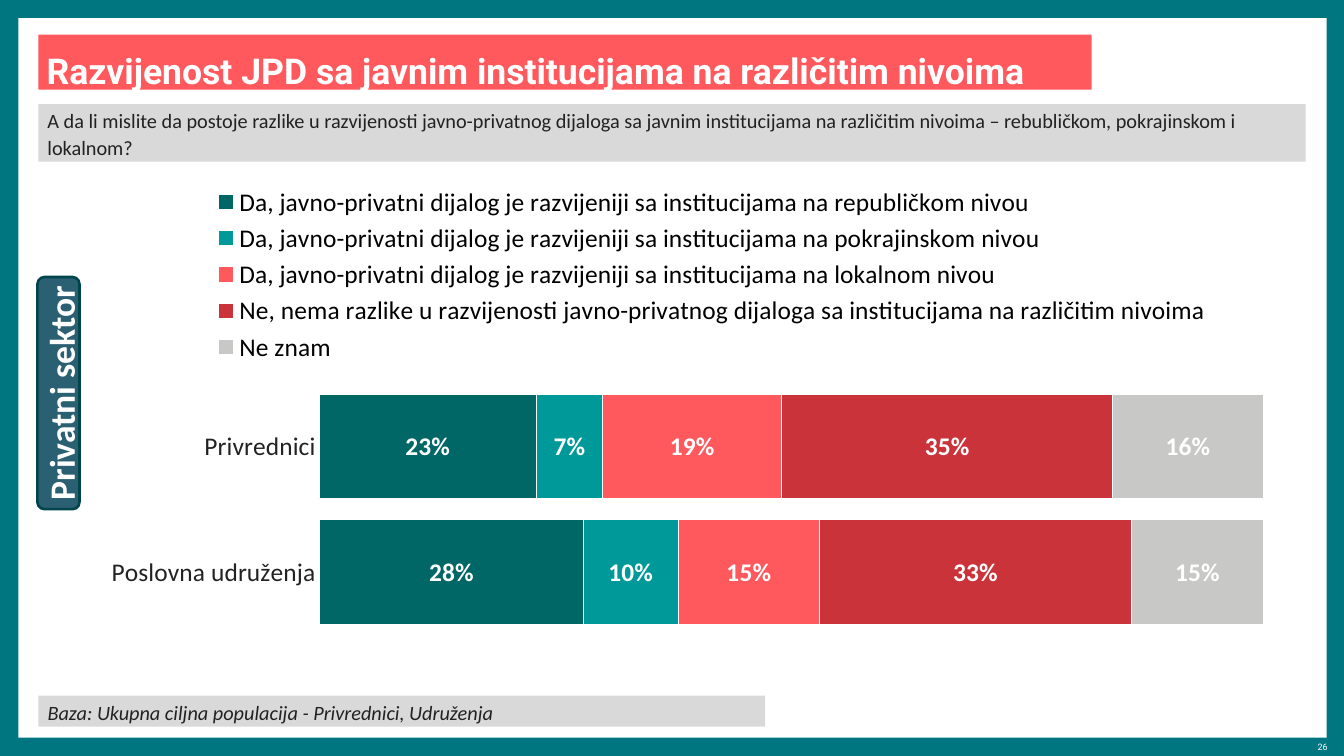
"""Build the slide on how developed the public-private dialogue is at each level."""
from lxml import etree
from pptx import Presentation
from pptx.chart.data import CategoryChartData
from pptx.dml.color import RGBColor
from pptx.enum.chart import XL_CHART_TYPE, XL_LEGEND_POSITION, XL_TICK_MARK
from pptx.enum.shapes import MSO_SHAPE
from pptx.enum.text import MSO_ANCHOR, MSO_AUTO_SIZE, PP_ALIGN
from pptx.oxml import parse_xml
from pptx.oxml.ns import nsdecls, qn
from pptx.util import Inches, Pt

RECTANGLE, ROUNDED = MSO_SHAPE.RECTANGLE, MSO_SHAPE.ROUNDED_RECTANGLE
LEFT, CENTER, RIGHT = PP_ALIGN.LEFT, PP_ALIGN.CENTER, PP_ALIGN.RIGHT
MIDDLE, NO_AUTOSIZE = MSO_ANCHOR.MIDDLE, MSO_AUTO_SIZE.NONE
NO_TICKS = XL_TICK_MARK.NONE

COLORS = {
    "frame": "007681", "white": "FFFFFF", "coral": "FF585D", "panel": "D9D9D9",
    "ink": "222223", "black": "000000", "badge": "2B5F72", "badge_line": "00454C",
    "republic": "006666", "province": "009999", "none": "CB333B", "unknown": "C8C9C7",
}


def style_font(font, color, **formats):
    """Apply font attributes and a named colour."""
    for name, value in formats.items():
        setattr(font, name, value)
    font.color.rgb = RGBColor.from_string(COLORS[color])


def fill_text(shape, box, text, insets, paragraph_formats, color, **font_formats):
    """Place a shape and write its single formatted paragraph."""
    shape.left, shape.top, shape.width, shape.height = map(Inches, box)
    frame = shape.text_frame
    frame.text = text
    sides = ("margin_left", "margin_top", "margin_right", "margin_bottom")
    frame_formats = dict(zip(sides, map(Inches, insets)))
    frame_formats |= {"word_wrap": True, "auto_size": NO_AUTOSIZE, "vertical_anchor": MIDDLE}
    for name, value in frame_formats.items():
        setattr(frame, name, value)
    paragraph = frame.paragraphs[0]
    for name, value in paragraph_formats.items():
        setattr(paragraph, name, value)
    style_font(paragraph.runs[0].font, color, **font_formats)


presentation = Presentation()
presentation.slide_width, presentation.slide_height = Inches(14.7), Inches(8.27)
slide = presentation.slides.add_slide(presentation.slide_layouts[1])
slide.background.fill.solid()
slide.background.fill.fore_color.rgb = RGBColor.from_string(COLORS["frame"])

title, base = slide.shapes.title, slide.placeholders[1]
page = slide.shapes.add_shape(RECTANGLE, Inches(0.2), Inches(0.2), Inches(14.31), Inches(7.87))
page.element.getparent().insert(2, page.element)
question = slide.shapes.add_shape(RECTANGLE, 0, 0, 0, 0)
sector = slide.shapes.add_shape(ROUNDED, 0, 0, 0, 0)
number = slide.shapes.add_textbox(0, 0, 0, 0)

fills = [(page, "white"), (title, "coral"), (base, "panel"), (question, "panel"), (sector, "badge")]
for shape, color in fills:
    shape.fill.solid()
    shape.fill.fore_color.rgb = RGBColor.from_string(COLORS[color])
    shape.line.fill.background()
for shape in (page, question, sector):
    shape.shadow.inherit = False
sector.line.color.rgb = RGBColor.from_string(COLORS["badge_line"])
sector.line.width = Pt(2)
sector.rotation = 270

panel_paragraph = {
    "alignment": LEFT, "line_spacing": 1.1, "space_before": Pt(6), "space_after": Pt(6),
}
panel_insets = (0.1, 0, 0.1, 0)
fill_text(title, (0.42, 0.38, 11.52, 0.6),
          "Razvijenost JPD sa javnim institucijama na različitim nivoima",
          (0.09, 0.08, 0.09, 0), {"alignment": LEFT, "line_spacing": Pt(41)},
          "white", name="Roboto", size=Pt(28), bold=True)
fill_text(base, (0.42, 7.61, 7.95, 0.34),
          "Baza: Ukupna ciljna populacija - Privrednici, Udruženja",
          panel_insets, panel_paragraph, "ink", name="Calibri", size=Pt(16), italic=True)
fill_text(question, (0.42, 1.14, 13.86, 0.63),
          "A da li mislite da postoje razlike u razvijenosti javno-privatnog dijaloga sa javnim "
          "institucijama na različitim nivoima – rebubličkom, pokrajinskom i lokalnom?",
          panel_insets, panel_paragraph, "ink", name="Calibri", size=Pt(16))
fill_text(sector, (-0.63, 4.07, 2.54, 0.46), "Privatni sektor", (0.04,) * 4,
          {"alignment": CENTER, "line_spacing": 1.1, "space_before": Pt(24)},
          "white", name="Calibri", size=Pt(28), bold=True)
fill_text(number, (13.73, 8.1, 0.79, 0.13), "26", (0,) * 4,
          {"alignment": RIGHT, "line_spacing": 1.1}, "white", name="Roboto", size=Pt(7))

base_properties = base.text_frame.paragraphs[0].runs[0]._r.getparent().get_or_add_pPr()
base_properties.set("marL", "0")
base_properties.set("indent", "0")
etree.SubElement(base_properties, qn("a:buNone"))

level_name = "Da, javno-privatni dijalog je razvijeniji sa institucijama na {} nivou"
answers = [
    (level_name.format("republičkom"), (23, 28), "republic"),
    (level_name.format("pokrajinskom"), (7, 10), "province"),
    (level_name.format("lokalnom"), (19, 15), "coral"),
    ("Ne, nema razlike u razvijenosti javno-privatnog dijaloga sa institucijama "
     "na različitim nivoima", (35, 33), "none"),
    ("Ne znam", (16, 15), "unknown"),
]
chart_data = CategoryChartData()
chart_data.categories = ["Privrednici", "Poslovna udruženja"]
for name, values, color in answers:
    chart_data.add_series(name, values)
chart = slide.shapes.add_chart(XL_CHART_TYPE.BAR_STACKED, Inches(0.87), Inches(1.93),
                               Inches(13.31), Inches(5.51), chart_data).chart
style_font(chart.font, "ink", name="Roboto", size=Pt(18))
chart.has_title = False

chart.has_legend = True
chart.legend.position = XL_LEGEND_POSITION.BOTTOM
chart.legend.include_in_layout = False
style_font(chart.legend.font, "black", name="Calibri", size=Pt(20))

category_axis, value_axis = chart.category_axis, chart.value_axis
category_axis.reverse_order = True
category_axis.major_tick_mark = category_axis.minor_tick_mark = NO_TICKS
category_axis.format.line.fill.background()
style_font(category_axis.tick_labels.font, "ink", name="Calibri", size=Pt(20))
value_axis.minimum_scale, value_axis.maximum_scale = 0, 100
value_axis.has_major_gridlines = False
value_axis.visible = False

plot = chart.plots[0]
plot.gap_width, plot.overlap, plot.vary_by_categories = 20, 100, False
for series, (name, values, color) in zip(plot.series, answers):
    series.format.fill.solid()
    series.format.fill.fore_color.rgb = RGBColor.from_string(COLORS[color])
    series.format.line.color.rgb = RGBColor.from_string(COLORS["white"])
    series.format.line.width = Pt(0.75)
    labels = series.data_labels
    labels.show_value = True
    labels.number_format, labels.number_format_is_linked = '0"%"', False
    style_font(labels.font, "white", name="Calibri", size=Pt(20), bold=True)

plot_area = chart._chartSpace.chart.plotArea
legend_element = chart.legend._element
for old_layout in plot_area.findall(qn("c:layout")) + legend_element.findall(qn("c:layout")):
    old_layout.getparent().remove(old_layout)
layouts = [
    (plot_area, 0, '<c:layoutTarget val="inner"/>', (0.197, 0.412, 0.776, 0.498)),
    (legend_element, 1, "", (0.11, 0.01, 0.82, 0.37)),
]
for parent, index, target, fractions in layouts:
    modes = '<c:xMode val="edge"/><c:yMode val="edge"/>'
    sizes = "".join(f'<c:{key} val="{value}"/>' for key, value in zip("xywh", fractions))
    parent.insert(index, parse_xml(
        f'<c:layout {nsdecls("c")}><c:manualLayout>{target}{modes}{sizes}'
        "</c:manualLayout></c:layout>"))

presentation.save("out.pptx")
